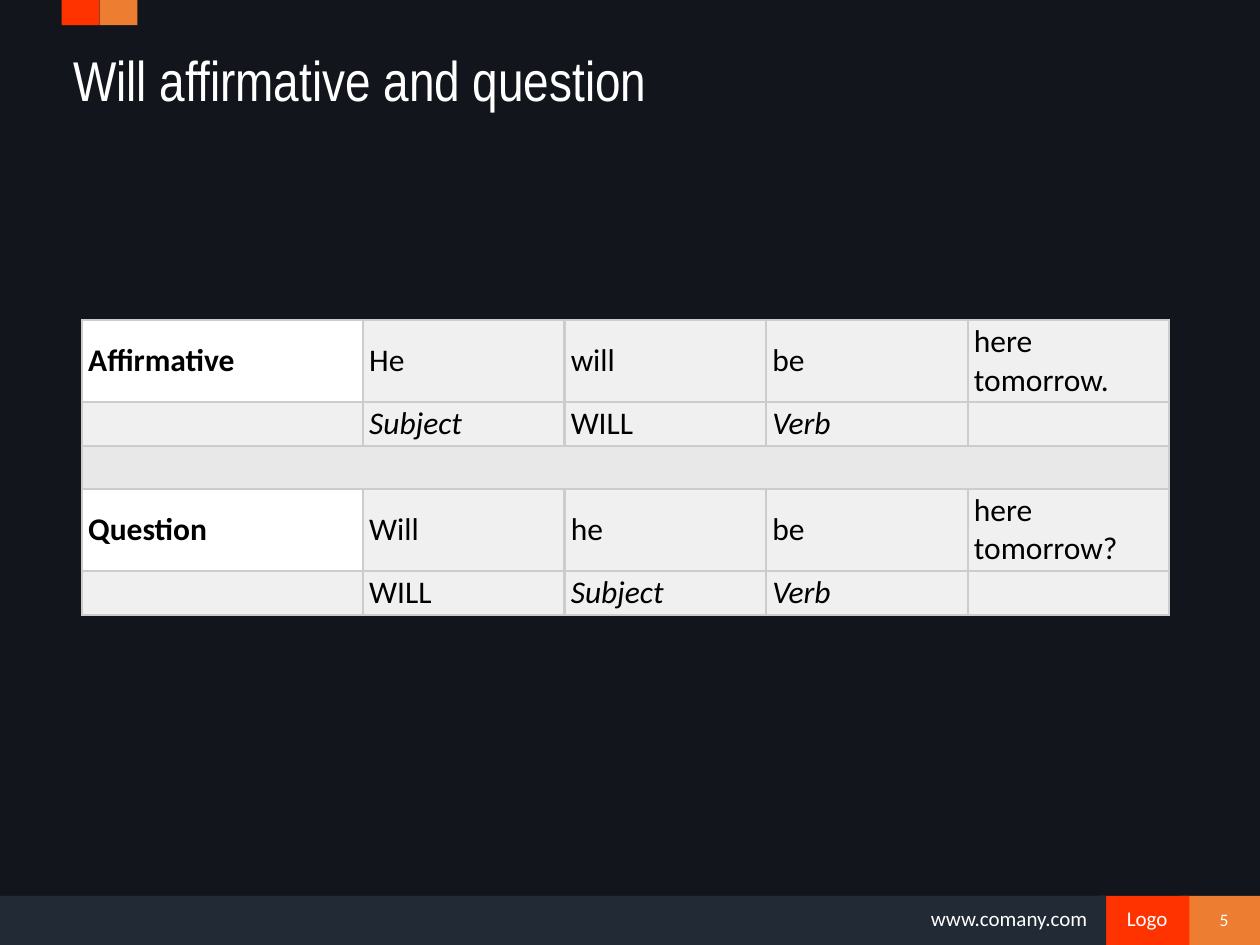
from lxml import etree
from pptx import Presentation, util as u
from pptx.dml.color import RGBColor
from pptx.enum import shapes, text
from pptx.oxml.ns import qn

HUE = {"back": "12161C", "bar": "222A35", "red": "FF3300", "gold": "ED7D31",
       "white": "FFFFFF", "black": "000000", "line": "CCCCCC",
       "cell": "F0F0F0", "gap": "E8E8E8"}
MID, LEFT = text.PP_ALIGN.CENTER, text.PP_ALIGN.LEFT

deck = Presentation()
deck.slide_width, deck.slide_height = u.Inches(10), u.Inches(7.5)
page = deck.slides.add_slide(deck.slide_layouts[5])
page.background.fill.solid()
page.background.fill.fore_color.rgb = RGBColor.from_string(HUE["back"])


def write(frame, words, size, hue="white", face="Calibri", align=LEFT):
    frame.text = words
    par = frame.paragraphs[0]
    par.alignment = align
    # Paragraph font keeps empty cells at the same size
    for font in [par.font] + [run.font for run in par.runs]:
        font.size, font.name = u.Pt(size), face
        font.color.rgb = RGBColor.from_string(HUE[hue])


# Footer bar and top tabs
foot, tab = 7.11, 0.3
for hue, x, y, w, h in [("gold", 9.36, foot, 0.64, 0.39),
                        ("red", 8.72, foot, 0.72, 0.39),
                        ("bar", 0, foot, 8.78, 0.39),
                        ("red", 0.49, 0, tab, 0.2),
                        ("gold", 0.49 + tab, 0, tab, 0.2)]:
    box = page.shapes.add_shape(shapes.MSO_SHAPE.RECTANGLE,
                                *map(u.Inches, (x, y, w, h)))
    box.shadow.inherit = False
    box.fill.solid()
    box.fill.fore_color.rgb = RGBColor.from_string(HUE[hue])
    box.line.fill.background()

# Footer text
for words, x, y, w, h, size, align, hold in [
        ("www.comany.com", 7.29, 7.14, 1.54, 0.3, 12, LEFT, text.MSO_ANCHOR.TOP),
        ("Logo", 8.83, 7.14, 0.55, 0.3, 12, MID, text.MSO_ANCHOR.TOP),
        ("5", 9.43, 7.1, 0.57, 0.4, 10, MID, text.MSO_ANCHOR.MIDDLE)]:
    frame = page.shapes.add_textbox(*map(u.Inches, (x, y, w, h))).text_frame
    frame.word_wrap = words == "5"
    frame.vertical_anchor = hold
    write(frame, words, size, align=align)

# Title
title = page.shapes.title
title.left, title.top, title.width, title.height = map(
    u.Inches, (0.48, 0.23, 8.94, 0.8))
title.text_frame.vertical_anchor = text.MSO_ANCHOR.MIDDLE
write(title.text_frame, "Will affirmative and question", 32, face="Arial Narrow")

# Table
rows = [["Affirmative", "He", "will", "be", "here tomorrow."],
        ["", "Subject", "WILL", "Verb", ""],
        [""] * 5,
        ["Question", "Will", "he", "be", "here tomorrow?"],
        ["", "WILL", "Subject", "Verb", ""]]
wide, high = [2.23] + [1.6] * 4, [0.65, 0.35, 0.34, 0.65, 0.35]
grid = page.shapes.add_table(5, 5, *map(
    u.Inches, (0.65, 2.54, sum(wide), sum(high)))).table
for col, w in zip(grid.columns, wide):
    col.width = u.Inches(w)
for row, h in zip(grid.rows, high):
    row.height = u.Inches(h)
grid.cell(2, 0).merge(grid.cell(2, 4))

for r, row in enumerate(rows):
    for c, words in enumerate(row):
        cell = grid.cell(r, c)
        head = c == 0 and words != ""
        write(cell.text_frame, words, 18, "black")
        for run in cell.text_frame.paragraphs[0].runs:
            run.font.bold = head
            run.font.italic = words in ("Subject", "Verb")
        cell.vertical_anchor = text.MSO_ANCHOR.MIDDLE
        cell.margin_left = u.Inches(0.05)
        cell.margin_right = u.Inches(0.1 if head else 0.05)
        cell.margin_top = cell.margin_bottom = u.Inches(0.05 if head else 0.02)
        # Borders come before the fill in the cell's XML
        prop = cell._tc.get_or_add_tcPr()
        for side in "LRTB":
            thin = head and side in "LT" or r == 2 and side == "B"
            edge = etree.SubElement(prop, qn("a:ln" + side),
                                    w=str(u.Pt(1 if thin else 1.5)))
            ink = etree.SubElement(edge, qn("a:solidFill"))
            etree.SubElement(ink, qn("a:srgbClr"), val=HUE["line"])
        cell.fill.solid()
        hue = "white" if head else "gap" if r == 2 else "cell"
        cell.fill.fore_color.rgb = RGBColor.from_string(HUE[hue])

deck.save("out.pptx")
